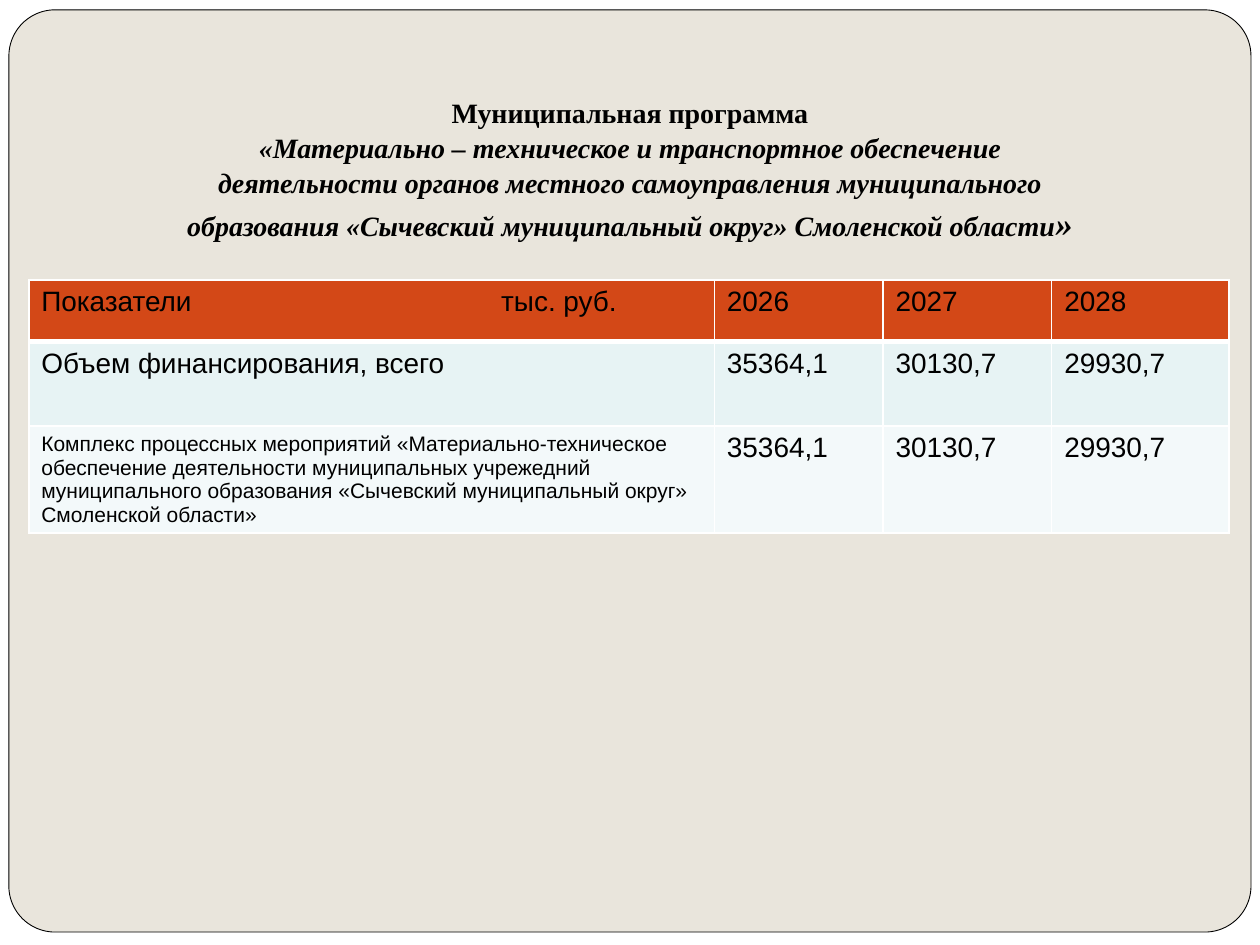
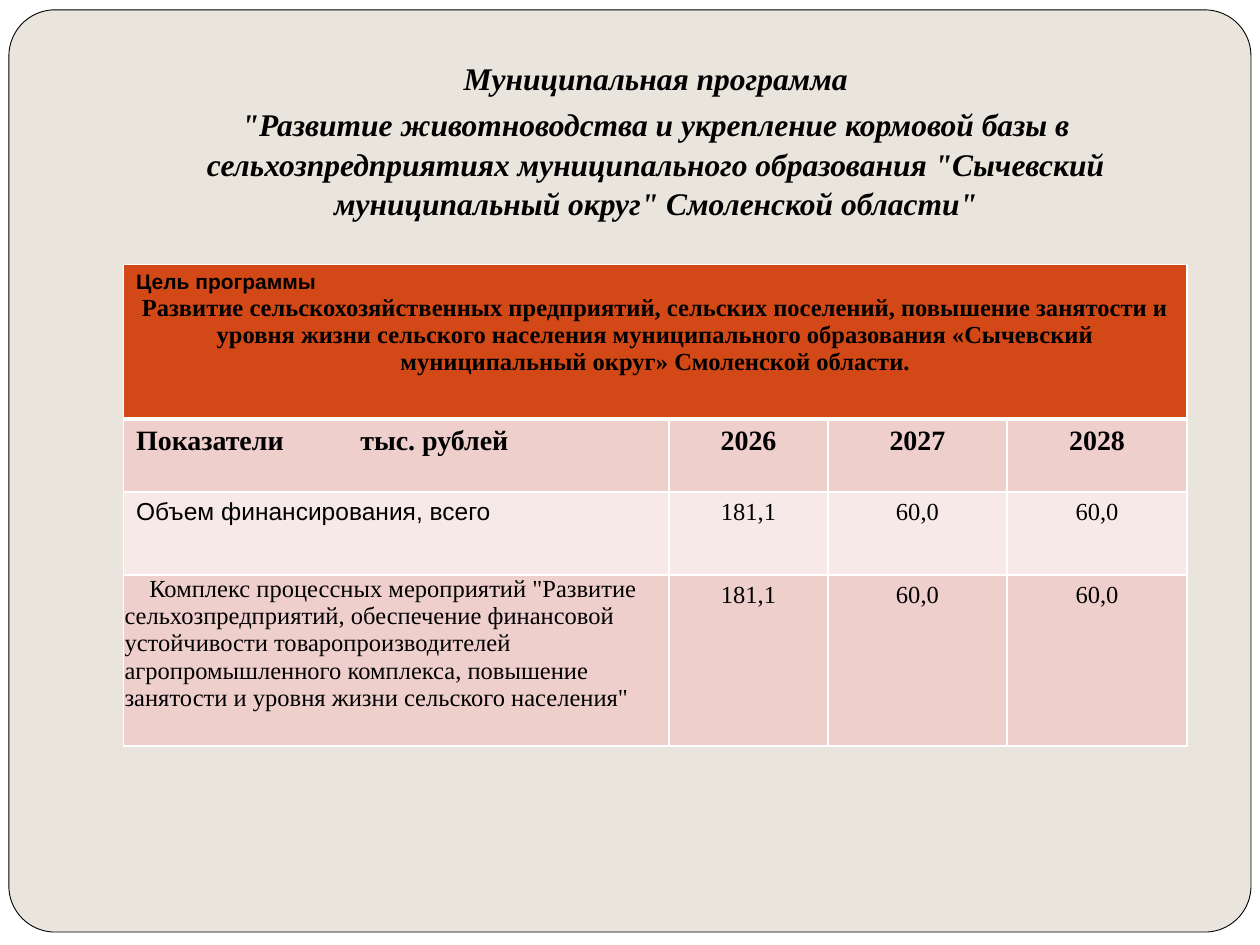
from pptx import Presentation
from pptx.dml.color import RGBColor
from pptx.enum import shapes, text
from pptx.oxml import parse_xml
from pptx.oxml.ns import nsdecls, qn
from pptx.util import Cm, Pt

# Palette and fonts
BLACK = RGBColor(0x00, 0x00, 0x00)
WHITE = RGBColor(0xFF, 0xFF, 0xFF)
SAND = RGBColor(0xE9, 0xE5, 0xDC)
ORANGE = RGBColor(0xD3, 0x48, 0x17)
ICE = RGBColor(0xE7, 0xF3, 0xF4)
PALE_ICE = RGBColor(0xF3, 0xF9, 0xFA)
ROSE = RGBColor(0xEF, 0xCF, 0xCC)
PALE_ROSE = RGBColor(0xF7, 0xE9, 0xE8)
SANS = "Arial"
SERIF = "Times New Roman"

YEARS = ["2026", "2027", "2028"]
CENTER = text.PP_ALIGN.CENTER
LEFT = text.PP_ALIGN.LEFT


class Report:
    """Holds the shared style and the current slide."""

    def __init__(self):
        self.deck = Presentation()
        self.deck.slide_width, self.deck.slide_height = Cm(25.4), Cm(19.05)
        self.layout = self.deck.slide_layouts[5]
        fill = self.deck.slide_master.background.fill
        fill.solid()
        fill.fore_color.rgb = SAND
        self.page = None

    def new_page(self):
        self.page = self.deck.slides.add_slide(self.layout)

    def backdrop(self):
        """Draw the white sheet and rounded panel, then share them via the layout."""
        sheet = self.panel(shapes.MSO_SHAPE.RECTANGLE, (0, 0, 25.4, 19.05), WHITE)
        panel = self.panel(shapes.MSO_SHAPE.ROUNDED_RECTANGLE,
                           (0.18, 0.2, 25.04, 18.59), SAND, BLACK)
        panel.adjustments[0] = 0.05
        for order, shape in enumerate((sheet, panel)):
            shape.element.nvSpPr.cNvPr.id = 100 + order
            self.layout.shapes.element.insert(2 + order, shape.element)

    def panel(self, kind, area, color, outline=None):
        shape = self.page.shapes.add_shape(kind, *map(Cm, area))
        shape.shadow.inherit = False
        shape.fill.solid()
        shape.fill.fore_color.rgb = color
        if outline is None:
            shape.line.fill.background()
        else:
            shape.line.color.rgb = outline
            shape.line.width = Pt(0.5)
        return shape

    def span(self, paragraph, words, size, font=SERIF, bold=False, italic=False):
        span = paragraph.add_run()
        span.text = words
        span.font.name, span.font.size = font, Pt(size)
        span.font.bold, span.font.italic = bold, italic
        span.font.color.rgb = BLACK

    def title(self, area, lines, gap=0):
        """Each line is a list of (words, size, italic) spans."""
        box = self.page.shapes.title
        box.left, box.top, box.width, box.height = map(Cm, area)
        frame = box.text_frame
        frame.word_wrap = True
        frame.auto_size = text.MSO_AUTO_SIZE.NONE
        frame.vertical_anchor = text.MSO_ANCHOR.BOTTOM
        frame.margin_left = frame.margin_right = frame.margin_bottom = Cm(0.25)
        frame.margin_top = Cm(0.13)
        for number, line in enumerate(lines):
            paragraph = frame.add_paragraph() if number else frame.paragraphs[0]
            paragraph.alignment = CENTER
            paragraph.line_spacing = 1.04
            paragraph.space_before = Pt(gap if number else 0)
            for words, size, italic in line:
                self.span(paragraph, words, size, bold=True, italic=italic)

    def table(self, corner, widths, heights):
        frame = self.page.shapes.add_table(
            len(heights), len(widths), *map(Cm, (*corner, sum(widths), sum(heights))))
        table = frame.table
        for column, width in zip(table.columns, widths):
            column.width = Cm(width)
        for row, height in zip(table.rows, heights):
            row.height = Cm(height)
        return table

    def row(self, table, number, color, label, values, **style):
        """Fill a row: a label (words, style) and then values in one style."""
        words, label_style = label
        self.cell(table, number, 0, color, words, **label_style)
        for column, value in enumerate(values, 1):
            self.cell(table, number, column, color, value, **style)

    def cell(self, table, row, column, color, words, align=LEFT, tab=None, **style):
        cell = table.cell(row, column)
        self.borders(cell, top=3 if row == 1 else 1, bottom=3 if row == 0 else 1)
        cell.fill.solid()
        cell.fill.fore_color.rgb = color
        paragraph = cell.text_frame.paragraphs[0]
        paragraph.alignment = align
        if tab:
            paragraph._p.get_or_add_pPr().append(parse_xml(
                f'<a:tabLst {nsdecls("a")}><a:tab pos="{Cm(tab)}" algn="l"/></a:tabLst>'))
        self.span(paragraph, words, **style)
        return cell

    def borders(self, cell, top, bottom):
        properties = cell._tc.get_or_add_tcPr()
        for side, width in (("L", 1), ("R", 1), ("T", top), ("B", bottom)):
            properties.append(parse_xml(
                f'<a:ln{side} {nsdecls("a")} w="{Pt(width)}"><a:solidFill>'
                f'<a:srgbClr val="{WHITE}"/></a:solidFill></a:ln{side}>'))


def support_page(report):
    report.title((1.27, 0.76, 22.86, 4.39), [
        [("Муниципальная программа", 16, False)],
        [("«Материально – техническое и транспортное обеспечение", 16, True)],
        [("деятельности органов местного самоуправления муниципального", 16, True)],
        [("образования «Сычевский муниципальный округ» Смоленской области", 16, True),
         ("»", 20, True)],
    ])
    table = report.table((0.58, 5.64), [13.82, 3.4, 3.4, 3.58], [1.25, 1.7, 2.15])
    plain = dict(size=16, font=SANS)
    amounts = ["35364,1", "30130,7", "29930,7"]
    report.row(table, 0, ORANGE,
               ("Показатели\tтыс. руб.", dict(plain, tab=9.27)), YEARS, **plain)
    report.row(table, 1, ICE, ("Объем финансирования, всего", plain), amounts, **plain)
    report.row(table, 2, PALE_ICE, (
        "Комплекс процессных мероприятий «Материально-техническое обеспечение "
        "деятельности муниципальных учрежедний муниципального образования "
        "«Сычевский муниципальный округ» Смоленской области»",
        dict(plain, size=12)), amounts, **plain)


def farming_page(report):
    report.title((2.31, 0.76, 21.82, 3.96), [
        [("Муниципальная программа", 18, True)],
        [('"Развитие животноводства и укрепление кормовой базы в '
          'сельхозпредприятиях муниципального образования "Сычевский '
          'муниципальный округ" Смоленской области"', 18, True)],
    ], gap=4)
    table = report.table((2.49, 5.33), [11, 3.2, 3.61, 3.63],
                         [3.12, 1.47, 1.67, 3.45])

    # Programme goal across the whole width
    table.cell(0, 0).merge(table.cell(0, 3))
    goal = report.cell(table, 0, 0, ORANGE, "Цель программы",
                       size=12, font=SANS, bold=True)
    paragraph = goal.text_frame.add_paragraph()
    paragraph.alignment = CENTER
    report.span(paragraph,
                "Развитие сельскохозяйственных предприятий, сельских поселений, "
                "повышение занятости и уровня жизни сельского населения "
                "муниципального образования «Сычевский муниципальный округ» "
                "Смоленской области.", 14, bold=True)

    # Yearly amounts
    heading = dict(size=16, bold=True)
    amount = dict(size=14, align=CENTER)
    amounts = ["181,1", "60,0", "60,0"]
    report.row(table, 1, ROSE, ("Показатели\tтыс. рублей", dict(heading, tab=4.52)),
               YEARS, align=CENTER, **heading)
    report.row(table, 2, PALE_ROSE,
               ("Объем финансирования, всего", dict(size=14, font=SANS)),
               amounts, **amount)
    report.row(table, 3, ROSE, (
        'Комплекс процессных мероприятий "Развитие сельхозпредприятий, '
        'обеспечение финансовой устойчивости товаропроизводителей '
        'агропромышленного комплекса, повышение занятости и уровня жизни '
        'сельского населения"', dict(size=14)), amounts, **amount)

    # The measures cell has tight margins and a first-line indent
    measures = table.cell(3, 0)
    measures.margin_left = measures.margin_right = measures.margin_top = Cm(0.02)
    measures.margin_bottom = 0
    indent = measures.text_frame.paragraphs[0]._p.get_or_add_pPr()
    indent.set("indent", str(Cm(0.5)))


def main():
    report = Report()
    report.new_page()
    report.backdrop()
    support_page(report)
    report.new_page()
    farming_page(report)
    report.deck.save("out.pptx")


if __name__ == "__main__":
    main()
